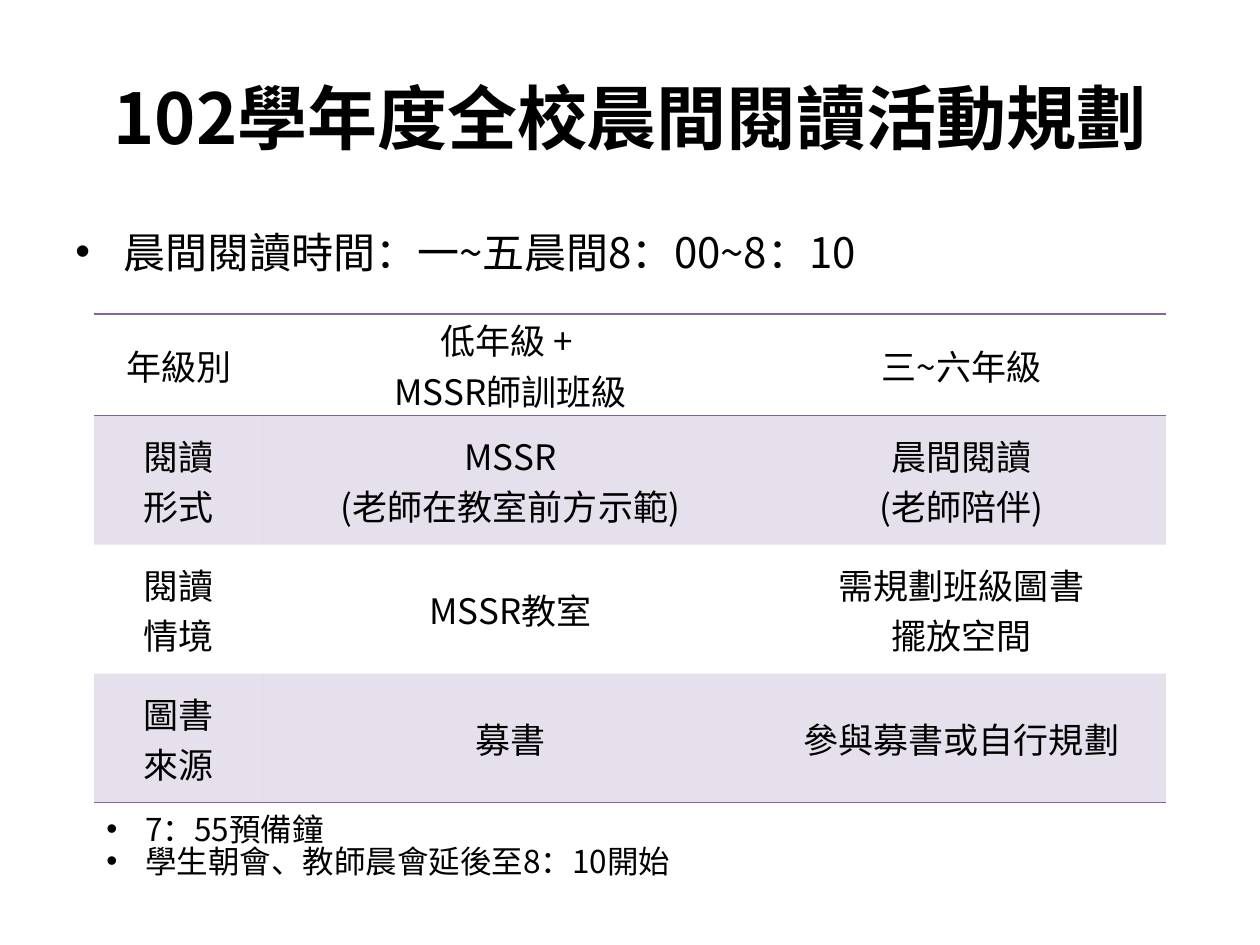
"""Build the morning reading plan slide."""
from dataclasses import dataclass

from lxml import etree
from pptx import Presentation, util as u
from pptx.dml.color import RGBColor
from pptx.enum import text
from pptx.oxml.ns import qn


@dataclass(frozen=True)
class Theme:
    face: str = "Noto Sans CJK SC"
    ink: str = "000000"
    tint: str = "8064A2"
    alpha: int = 20
    head: int = 40
    body: int = 24
    cell: int = 20
    note: int = 18
    plain: str = "{2D5ABB26-0587-4C30-8999-92F81FD0307C}"


MID = text.MSO_ANCHOR.MIDDLE
TOP = text.MSO_ANCHOR.TOP
CENTER = text.PP_ALIGN.CENTER
LEFT = text.PP_ALIGN.LEFT


def px(n):
    return u.Emu(round(n * 914400 / 126))


def put(item, form):
    for name, value in form.items():
        setattr(item, name, value)


class Deck:
    def __init__(self, theme):
        self.look = theme
        self.prs = Presentation()
        put(self.prs, {"slide_width": px(1260), "slide_height": px(945)})
        self.slide = self.prs.slides.add_slide(self.prs.slide_layouts[6])

    def para(self, par, words, size, bold=False, hang=0, pad=0, **form):
        par.text = words
        props = par._p.get_or_add_pPr()
        if hang:
            props.set("marL", str(px(hang)))
            props.set("indent", str(-px(hang)))
            etree.SubElement(props, qn("a:buFont"), typeface="Arial")
            etree.SubElement(props, qn("a:buChar"), char="•")
        elif pad:
            props.set("marL", str(px(pad)))
            props.set("indent", "0")
        put(par, form)
        for run in par.runs:
            put(run.font, {"size": u.Pt(size), "bold": bold, "name": self.look.face})
            run.font.color.rgb = RGBColor.from_string(self.look.ink)
            etree.SubElement(run._r.rPr, qn("a:ea"), typeface=self.look.face)

    def box(self, area, lines, size, anchor=TOP, fit=text.MSO_AUTO_SIZE.NONE, **form):
        frame = self.slide.shapes.add_textbox(*map(px, area)).text_frame
        put(frame, {"word_wrap": True, "auto_size": fit, "vertical_anchor": anchor})
        for i, words in enumerate(lines):
            par = frame.add_paragraph() if i else frame.paragraphs[0]
            self.para(par, words, size, **form)

    def rule(self, cell, side):
        line = etree.Element(qn("a:" + side), w=str(u.Pt(1)))
        fill = etree.SubElement(line, qn("a:solidFill"))
        etree.SubElement(fill, qn("a:srgbClr"), val=self.look.tint)
        cell._tc.get_or_add_tcPr().insert(0, line)

    def shade(self, cell, band):
        if not band:
            cell.fill.background()
            return
        cell.fill.solid()
        cell.fill.fore_color.rgb = RGBColor.from_string(self.look.tint)
        color = cell._tc.tcPr.find(".//" + qn("a:srgbClr"))
        etree.SubElement(color, qn("a:alpha"), val=str(self.look.alpha * 1000))

    def table(self, spot, cols, rows, data):
        size = (sum(cols), sum(rows))
        grid = self.slide.shapes.add_table(
            len(rows), len(cols), *map(px, spot + size)).table
        put(grid, {"first_row": False, "horz_banding": False})
        grid._tbl.tblPr.find(qn("a:tableStyleId")).text = self.look.plain
        for col, wide in zip(grid.columns, cols):
            col.width = px(wide)
        for row, tall in zip(grid.rows, rows):
            row.height = px(tall)
        form = {"vertical_anchor": MID, "margin_left": px(9), "margin_right": px(9),
                "margin_top": 0, "margin_bottom": 0}
        for r, line in enumerate(data):
            for c, words in enumerate(line):
                cell = grid.cell(r, c)
                put(cell, form)
                self.para(cell.text_frame.paragraphs[0], words, self.look.cell,
                          pad=42 if c else 0, alignment=CENTER)
                self.shade(cell, r % 2)
                if r in (0, len(rows) - 1):
                    self.rule(cell, "lnB")
                if r == 0:
                    self.rule(cell, "lnT")


def main():
    look = Theme()
    deck = Deck(look)
    deck.box((63, 38, 1134, 157), ["102學年度全校晨間閱讀活動規劃"], look.head,
             anchor=MID, bold=True, alignment=CENTER)
    deck.box((63, 220, 1134, 624), ["晨間閱讀時間：一~五晨間8：00~8：10"], look.body,
             hang=48, alignment=LEFT)
    deck.table((94, 314), (170, 451, 451), (79, 129, 129, 129), [
        ("年級別", "低年級 + \nMSSR師訓班級", "三~六年級"),
        ("閱讀\n形式", "MSSR\n(老師在教室前方示範)", "晨間閱讀\n(老師陪伴)"),
        ("閱讀\n情境", "MSSR教室", "需規劃班級圖書\n擺放空間"),
        ("圖書\n來源", "募書", "參與募書或自行規劃"),
    ])
    deck.box((94, 810, 714, 89), ["7：55預備鐘", "學生朝會、教師晨會延後至8：10開始"],
             look.note, fit=text.MSO_AUTO_SIZE.SHAPE_TO_FIT_TEXT, hang=39,
             alignment=LEFT, line_spacing=0.84)
    deck.prs.save("out.pptx")


if __name__ == "__main__":
    main()
